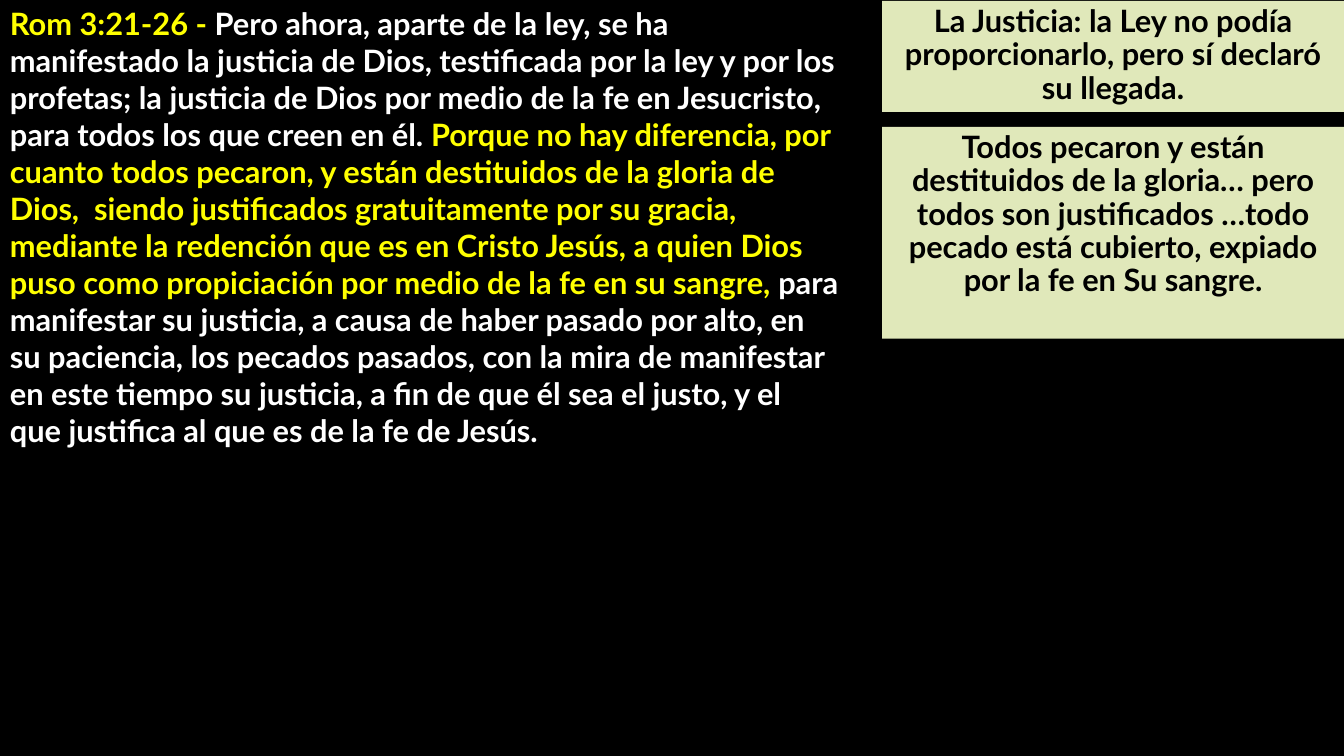
from pptx import Presentation
from pptx.dml.color import RGBColor
from pptx.enum.shapes import MSO_SHAPE
from pptx.enum.text import MSO_ANCHOR, PP_ALIGN
from pptx.util import Inches, Pt

RECT = MSO_SHAPE.RECTANGLE
TOP = MSO_ANCHOR.TOP
CENTER = PP_ALIGN.CENTER

COLORS = {"black": "000000", "white": "FFFFFF", "yellow": "FFFF00", "note": "E0E8BA"}

PASSAGE = [
    ("Rom 3:21-26 - ", "yellow"),
    ("Pero ahora, aparte de la ley, se ha manifestado la justicia de Dios, "
     "testificada por la ley y por los profetas; la justicia de Dios por medio "
     "de la fe en Jesucristo, para todos los que creen en él. ", "white"),
    ("Porque no hay diferencia, por cuanto todos pecaron, y están destituidos "
     "de la gloria de Dios,  siendo justificados gratuitamente por su gracia, "
     "mediante la redención que es en Cristo Jesús, a quien Dios puso como "
     "propiciación por medio de la fe en su sangre,", "yellow"),
    (" para manifestar su justicia, a causa de haber pasado por alto, en su "
     "paciencia, los pecados pasados, con la mira de manifestar en este tiempo "
     "su justicia, a fin de que él sea el justo, y el que justifica al que es "
     "de la fe de Jesús.", "white"),
]

# top, height, text
NOTES = [
    (0.01, 1.1, "La Justicia: la Ley no podía proporcionarlo, pero sí declaró su llegada."),
    (1.26, 2.1, "Todos pecaron y están destituidos de la gloria… pero todos son "
                "justificados …todo pecado está cubierto, expiado por la fe en Su sangre."),
]


def rgb(name):
    return RGBColor.from_string(COLORS[name])


def write(tf, runs):
    """Fill the frame with one bold paragraph of (text, colour) runs."""
    tf.word_wrap = True
    tf.vertical_anchor = TOP
    p = tf.paragraphs[0]
    p.font.name = "Lato"
    p.font.size = Pt(22)
    p.font.bold = True
    for text, color in runs:
        r = p.add_run()
        r.text = text
        r.font.color.rgb = rgb(color)
    return p


def add_passage(s, left, top, width, height):
    box = s.shapes.add_textbox(Inches(left), Inches(top), Inches(width), Inches(height))
    write(box.text_frame, PASSAGE)


def add_note(s, left, top, width, height, text):
    sp = s.shapes.add_shape(RECT, Inches(left), Inches(top), Inches(width), Inches(height))
    sp.shadow.inherit = False
    sp.fill.solid()
    sp.fill.fore_color.rgb = rgb("note")
    sp.line.fill.background()
    p = write(sp.text_frame, [(text, "black")])
    p.alignment = CENTER
    p.line_spacing = 0.9


def main():
    prs = Presentation()
    prs.slide_width = Inches(13.33)
    prs.slide_height = Inches(7.5)
    s = prs.slides.add_slide(prs.slide_layouts[6])
    s.background.fill.solid()
    s.background.fill.fore_color.rgb = rgb("black")
    add_passage(s, 0, 0, 8.42, 5.28)
    for top, height, text in NOTES:
        add_note(s, 8.75, top, 4.58, height, text)
    prs.save("out.pptx")


if __name__ == "__main__":
    main()
